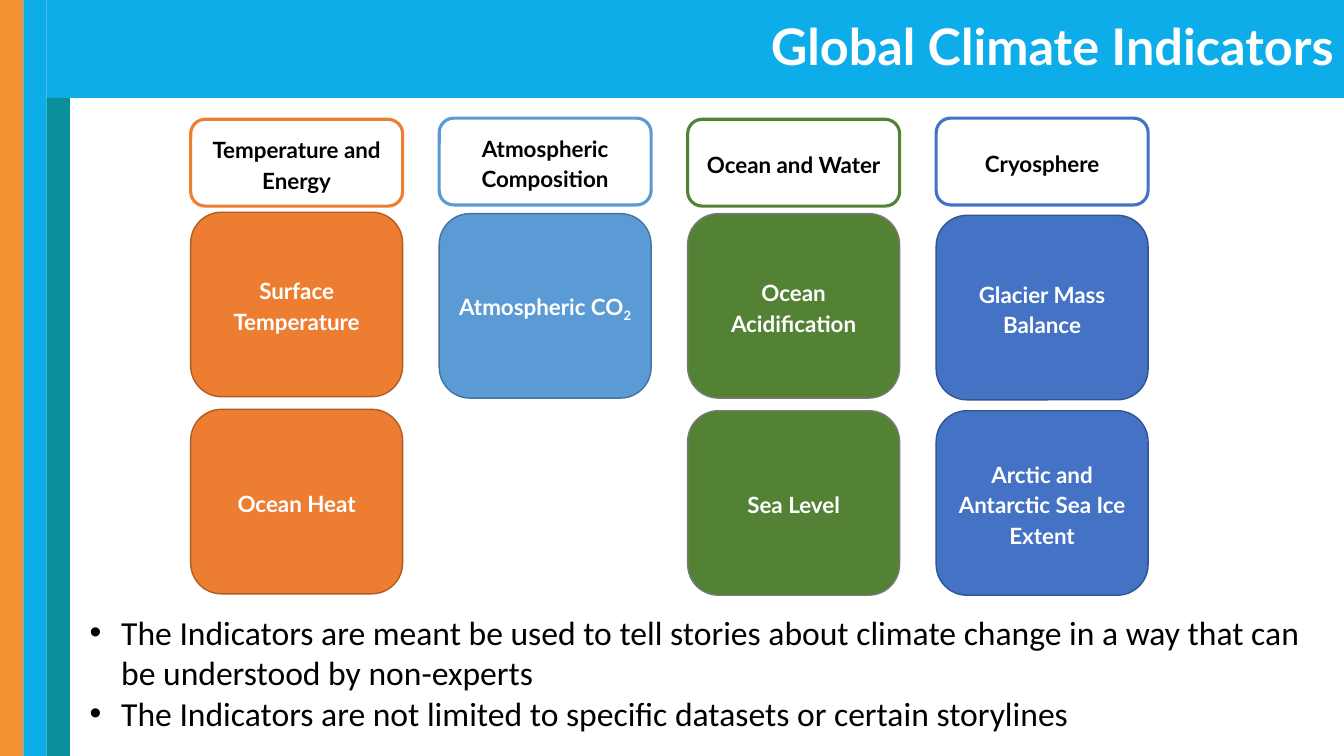
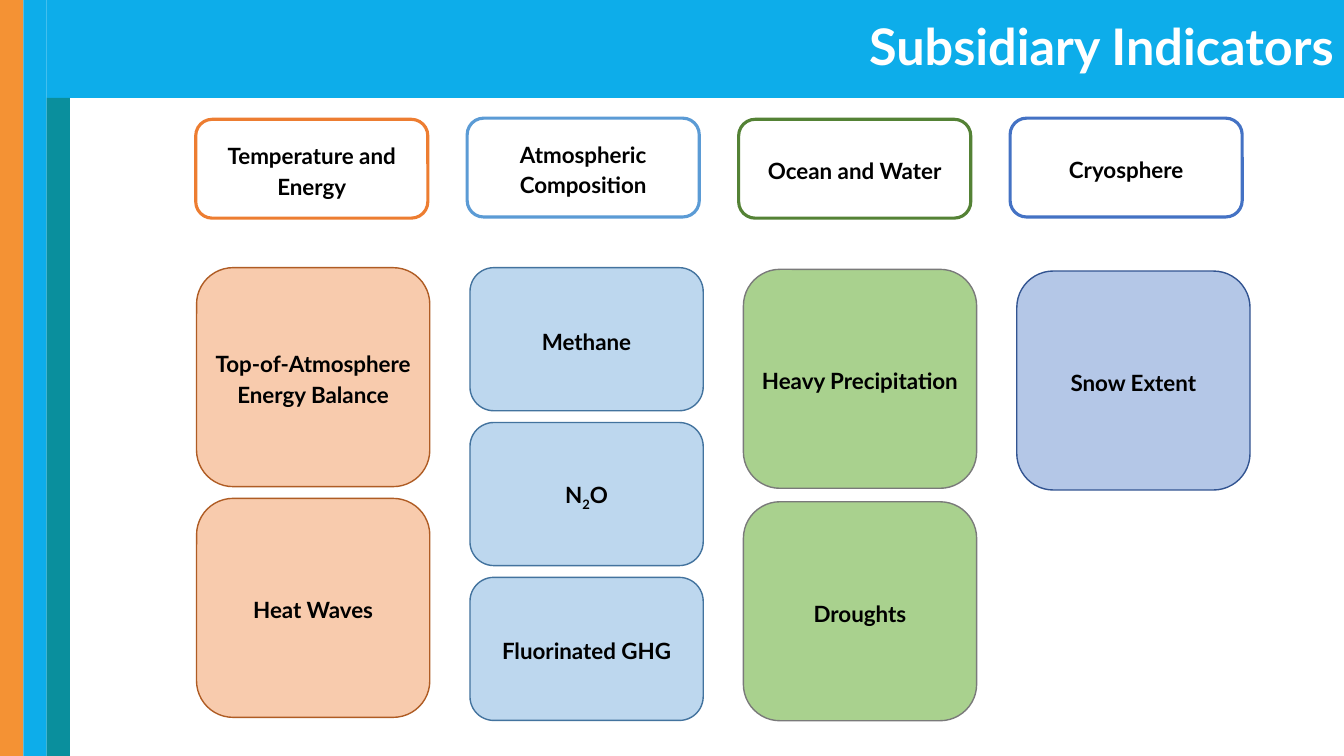
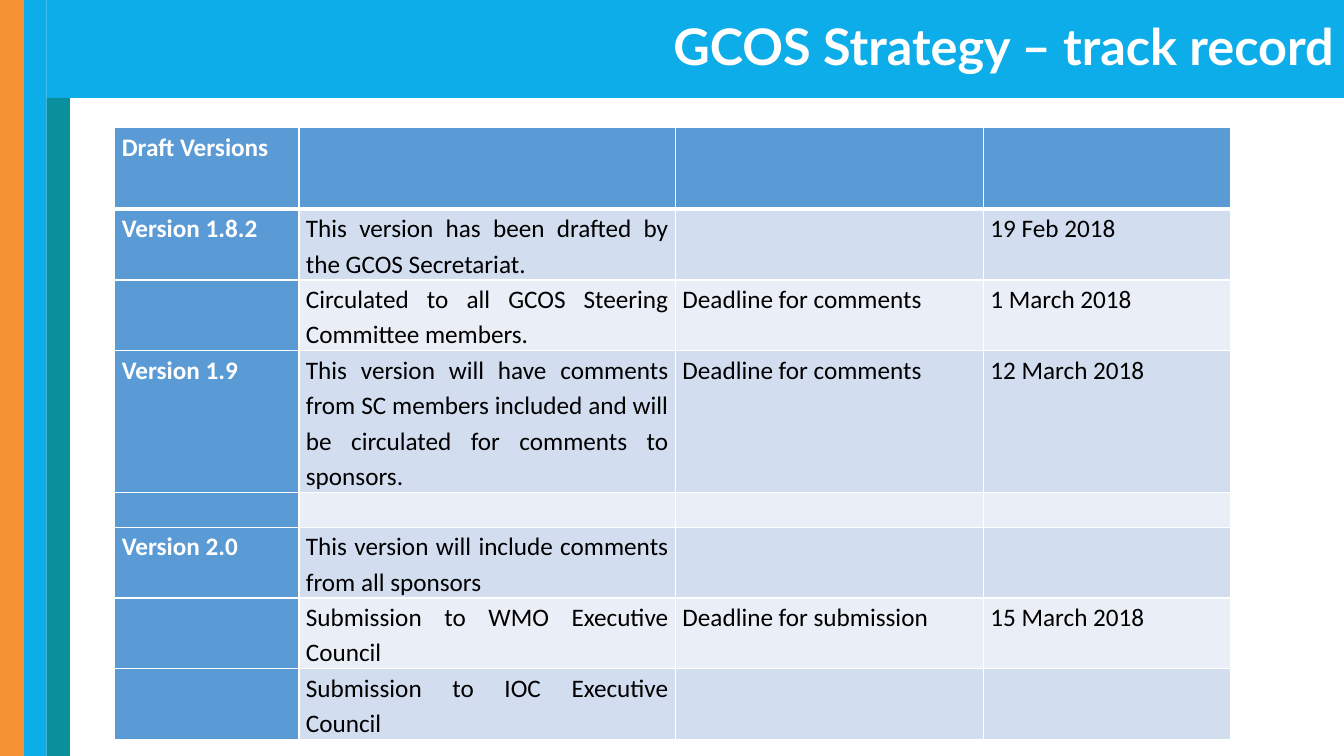
from lxml import etree
from pptx import Presentation
from pptx.dml.color import RGBColor
from pptx.enum.shapes import MSO_SHAPE
from pptx.enum.text import MSO_ANCHOR, MSO_AUTO_SIZE, PP_ALIGN
from pptx.oxml.ns import qn
from pptx.util import Pt

WHITE = RGBColor(0xFF, 0xFF, 0xFF)
BLACK = RGBColor(0, 0, 0)
BAND_ORANGE = RGBColor(0xF4, 0x92, 0x34)
BAND_BLUE = RGBColor(0x0D, 0xAD, 0xEA)
BAND_TEAL = RGBColor(0x0A, 0x8F, 0x9D)
ORANGE = RGBColor(0xED, 0x7D, 0x31)
ORANGE_EDGE = RGBColor(0xAF, 0x5C, 0x24)
ORANGE_PALE = RGBColor(0xF8, 0xCB, 0xAD)
BLUE = RGBColor(0x5B, 0x9B, 0xD5)
BLUE_EDGE = RGBColor(0x43, 0x73, 0x9E)
BLUE_PALE = RGBColor(0xBD, 0xD7, 0xEE)
GREEN = RGBColor(0x54, 0x82, 0x35)
GREEN_EDGE = RGBColor(0x7A, 0x7A, 0x7A)
GREEN_PALE = RGBColor(0xA9, 0xD1, 0x8E)
INDIGO = RGBColor(0x44, 0x72, 0xC4)
INDIGO_EDGE = RGBColor(0x32, 0x54, 0x91)
INDIGO_PALE = RGBColor(0xB4, 0xC7, 0xE7)
ROW_ODD = RGBColor(0xD2, 0xDE, 0xEF)
ROW_EVEN = RGBColor(0xEA, 0xEF, 0xF7)

SLIDE_W, SLIDE_H = 960, 540
BAND_W = 16.67
TITLE_H = 70

# heading, colour, edge, pale colour, heading top
THEMES = [
    ("Temperature and Energy", ORANGE, ORANGE_EDGE, ORANGE_PALE, 85.2),
    ("Atmospheric Composition", BLUE, BLUE_EDGE, BLUE_PALE, 84.4),
    ("Ocean and Water", GREEN, GREEN_EDGE, GREEN_PALE, 85.2),
    ("Cryosphere", INDIGO, INDIGO_EDGE, INDIGO_PALE, 84.4),
]


def add_titled_slide(title):
    """Add a slide with the side bands and the filled title bar."""
    s = prs.slides.add_slide(prs.slide_layouts[5])
    bands = [(BAND_ORANGE, 0), (BAND_BLUE, 0), (BAND_TEAL, TITLE_H)]
    for i, (color, top) in enumerate(bands):
        sp = s.shapes.add_shape(MSO_SHAPE.RECTANGLE, Pt(i * BAND_W), Pt(top),
                                Pt(BAND_W), Pt(SLIDE_H - top))
        sp.shadow.inherit = False
        sp.fill.solid()
        sp.fill.fore_color.rgb = color
        sp.line.fill.background()
    bar = s.shapes.title
    bar.left, bar.top = Pt(2 * BAND_W), Pt(0)
    bar.width, bar.height = Pt(SLIDE_W - 2 * BAND_W), Pt(TITLE_H)
    bar.fill.solid()
    bar.fill.fore_color.rgb = BAND_BLUE
    tf = bar.text_frame
    tf.auto_size = MSO_AUTO_SIZE.NONE
    tf.vertical_anchor = MSO_ANCHOR.MIDDLE
    p = tf.paragraphs[0]
    p.alignment = PP_ALIGN.RIGHT
    p.line_spacing = 0.9
    r = p.add_run()
    r.text = title
    r.font.name, r.font.size, r.font.bold = "Lato", Pt(36), True
    r.font.color.rgb = WHITE
    return s


def add_box(s, frame, fill, edge, weight, color, pieces):
    """Add a rounded box; every second piece of its text is a subscript."""
    sp = s.shapes.add_shape(MSO_SHAPE.ROUNDED_RECTANGLE, *map(Pt, frame))
    sp.shadow.inherit = False
    sp.fill.solid()
    sp.fill.fore_color.rgb = fill
    sp.line.color.rgb = edge
    sp.line.width = Pt(weight)
    tf = sp.text_frame
    tf.word_wrap = True
    tf.vertical_anchor = MSO_ANCHOR.MIDDLE
    tf.margin_left = tf.margin_right = tf.margin_top = tf.margin_bottom = 0
    p = tf.paragraphs[0]
    p.alignment = PP_ALIGN.CENTER
    p.line_spacing = 1.15
    p.space_after = Pt(6)
    for i, piece in enumerate(pieces):
        r = p.add_run()
        r.text = piece
        r.font.name, r.font.size, r.font.bold = "Lato", Pt(16), True
        r.font.color.rgb = color
        if i % 2:
            r._r.get_or_add_rPr().set("baseline", "-25000")


prs = Presentation()
prs.slide_width, prs.slide_height = Pt(SLIDE_W), Pt(SLIDE_H)

# Indicator slides: title, pale cards or not, (left, pitch, width) of headings
# and of cards, heading height, then (top, step, height, cards) per theme
INDICATOR_SLIDES = [
    ("Global Climate Indicators", False, (136.2, 177.5, 151.4), (136.2, 177.5, 151.4), 62, [
        (151.6, 140.8, 131.8, [["Surface Temperature"], ["Ocean Heat"]]),
        (152.6, 0, 131.8, [["Atmospheric CO", "2"]]),
        (152.6, 140.8, 131.8, [["Ocean Acidification"], ["Sea Level"]]),
        (153.8, 139.6, 131.8, [["Glacier Mass Balance"],
                               ["Arctic and Antarctic Sea Ice Extent"]]),
    ]),
    ("Subsidiary Indicators", True, (139.8, 193.9, 165.8), (140.4, 195.3, 166.6), 70.6, [
        (191.2, 164.8, 156.4, [["Top-of-Atmosphere Energy Balance"], ["Heat Waves"]]),
        (191.2, 110.6, 102.2, [["Methane"], ["N", "2", "O"], ["Fluorinated GHG"]]),
        (192.4, 166, 156.4, [["Heavy Precipitation"], ["Droughts"]]),
        (193.6, 0, 156.4, [["Snow Extent"]]),
    ]),
]
indicator_slides = []
for title, pale, heading_grid, card_grid, heading_h, columns in INDICATOR_SLIDES:
    s = add_titled_slide(title)
    indicator_slides.append(s)
    for i, (theme, column) in enumerate(zip(THEMES, columns)):
        heading, strong, edge, light, heading_top = theme
        left, pitch, width = heading_grid
        add_box(s, (left + i * pitch, heading_top, width, heading_h),
                WHITE, strong, 2.25, BLACK, [heading])
        left, pitch, width = card_grid
        top, step, height, cards = column
        for j, pieces in enumerate(cards):
            add_box(s, (left + i * pitch, top + j * step, width, height),
                    light if pale else strong, edge, 1,
                    BLACK if pale else WHITE, pieces)

# Notes on the use of the indicators
tb = indicator_slides[0].shapes.add_textbox(Pt(57), Pt(433.5), Pt(903), Pt(94))
tf = tb.text_frame
tf.word_wrap = True
USES = [
    "The Indicators are meant be used to tell stories about climate change "
    "in a way that can be understood by non-experts",
    "The Indicators are not limited to specific datasets or certain storylines",
]
for i, use in enumerate(USES):
    p = tf.add_paragraph() if i else tf.paragraphs[0]
    pPr = p._p.get_or_add_pPr()
    pPr.set("marL", str(Pt(22.5)))
    pPr.set("indent", str(-Pt(22.5)))
    etree.SubElement(pPr, qn("a:buFont"), typeface="Arial")
    etree.SubElement(pPr, qn("a:buChar"), char="•")
    r = p.add_run()
    r.text = use
    r.font.name, r.font.size = "Calibri", Pt(24)
    r.font.color.rgb = BLACK

# Track record table
VERSIONS = [
    ("Draft Versions", "", "", ""),
    ("Version 1.8.2", "This version has been drafted by the GCOS Secretariat.",
     "", "19 Feb 2018"),
    ("", "Circulated to all GCOS Steering Committee members.",
     "Deadline for comments", "1 March 2018"),
    ("Version 1.9", "This version will have comments from SC members included "
     "and will be circulated for comments to sponsors.",
     "Deadline for comments", "12 March 2018"),
    ("", "", "", ""),
    ("Version 2.0", "This version will include comments from all sponsors", "", ""),
    ("", "Submission to WMO Executive Council",
     "Deadline for submission", "15 March 2018"),
    ("", "Submission to IOC Executive Council", "", ""),
]
COL_WIDTHS = [131.5, 269, 220, 176.5]
ROW_HEIGHTS = [58.5, 49.6, 49.6, 99.2, 25, 49.6, 49.6, 49.6]

s = add_titled_slide("GCOS Strategy – track record")
table = s.shapes.add_table(len(VERSIONS), len(COL_WIDTHS), Pt(82), Pt(91),
                           Pt(sum(COL_WIDTHS)), Pt(sum(ROW_HEIGHTS))).table
for col, width in zip(table.columns, COL_WIDTHS):
    col.width = Pt(width)
for i, (row, height) in enumerate(zip(table.rows, ROW_HEIGHTS)):
    row.height = Pt(height)
    for j, text in enumerate(VERSIONS[i]):
        cell = table.cell(i, j)
        cell.margin_left = cell.margin_right = Pt(5)
        cell.margin_top = cell.margin_bottom = 0
        tcPr = cell._tc.get_or_add_tcPr()
        for side in ("L", "R", "T", "B"):
            under_header = (i, side) in ((0, "B"), (1, "T"))
            ln = etree.SubElement(tcPr, qn("a:ln" + side), w=str(Pt(3 if under_header else 1)))
            line_fill = etree.SubElement(ln, qn("a:solidFill"))
            etree.SubElement(line_fill, qn("a:srgbClr"), val=str(WHITE))
        label = i == 0 or j == 0
        cell.fill.solid()
        cell.fill.fore_color.rgb = BLUE if label else ROW_ODD if i % 2 else ROW_EVEN
        if text:
            p = cell.text_frame.paragraphs[0]
            p.alignment = PP_ALIGN.JUSTIFY
            p.line_spacing = 1.15
            r = p.add_run()
            r.text = text
            r.font.name, r.font.size, r.font.bold = "Calibri", Pt(18), label
            r.font.color.rgb = WHITE if label else BLACK

prs.save("out.pptx")
